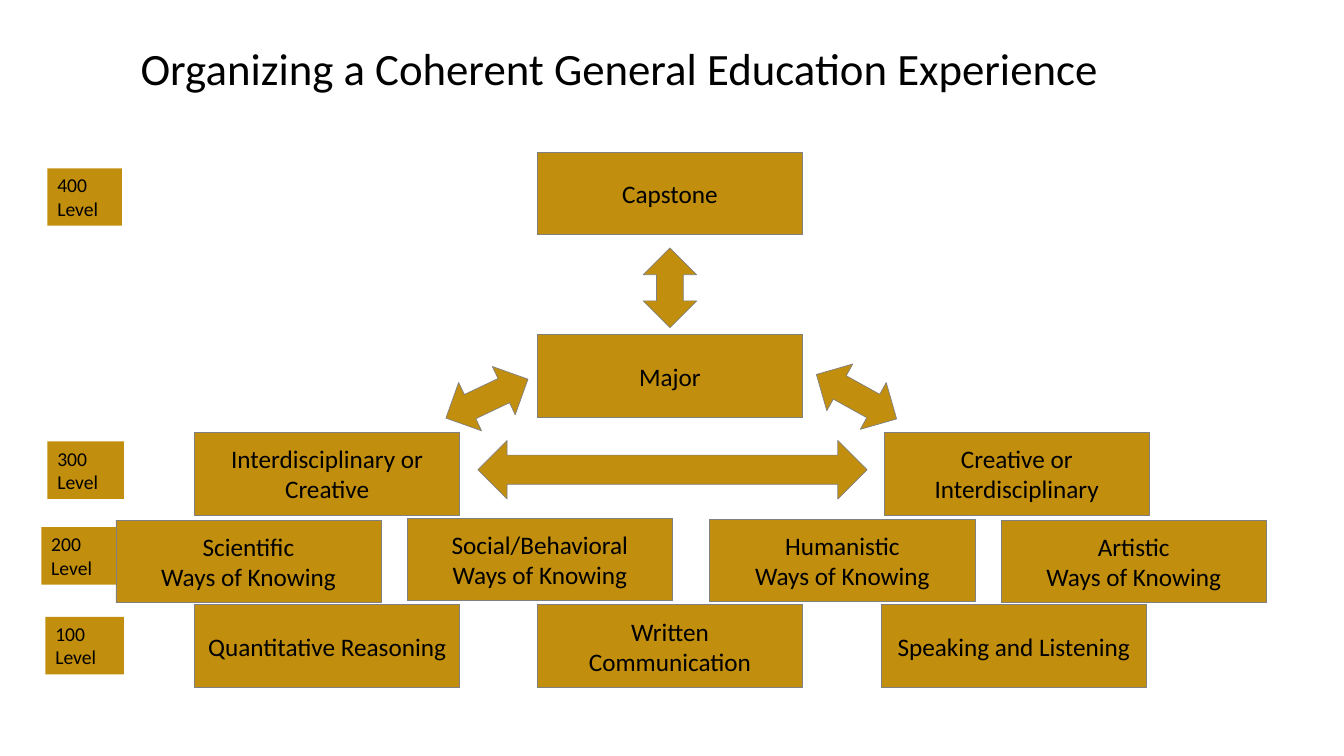
from dataclasses import dataclass

from pptx import Presentation
from pptx.dml.color import RGBColor
from pptx.enum import shapes, text
from pptx.util import Inches, Pt


@dataclass(frozen=True)
class Theme:
    font: str = "Calibri"
    gold: str = "C28E0E"
    gray: str = "808080"
    ink: str = "000000"
    title: int = 32
    body: int = 18
    label: int = 14
    edge: float = 0.5


def write(frame, words, theme, size, align=text.PP_ALIGN.LEFT,
          anchor=text.MSO_ANCHOR.TOP):
    """Fill a text frame, one paragraph per line of words."""
    frame.word_wrap = True
    frame.vertical_anchor = anchor
    frame.text = words
    for para in frame.paragraphs:
        para.alignment = align
        font = para.font
        font.name, font.size = theme.font, Pt(size)
        font.color.rgb = RGBColor.from_string(theme.ink)


class Deck:
    def __init__(self, theme):
        self.theme = theme
        self.prs = Presentation()
        self.prs.slide_width = Inches(13.33)
        self.prs.slide_height = Inches(7.5)
        self.slide = self.prs.slides.add_slide(self.prs.slide_layouts[6])

    def shape(self, kind, left, top, width, height, edged=True):
        item = self.slide.shapes.add_shape(
            kind, Inches(left), Inches(top), Inches(width), Inches(height))
        item.shadow.inherit = False
        item.fill.solid()
        item.fill.fore_color.rgb = RGBColor.from_string(self.theme.gold)
        if edged:
            item.line.color.rgb = RGBColor.from_string(self.theme.gray)
            item.line.width = Pt(self.theme.edge)
        else:
            item.line.fill.background()
        return item

    def course(self, words, left, top):
        box = self.shape(shapes.MSO_SHAPE.RECTANGLE, left, top, 2.63, 0.82)
        write(box.text_frame, words, self.theme, self.theme.body,
              align=text.PP_ALIGN.CENTER, anchor=text.MSO_ANCHOR.MIDDLE)

    def level(self, words, left, top, width):
        box = self.shape(shapes.MSO_SHAPE.RECTANGLE, left, top, width, 0.57,
                         edged=False)
        write(box.text_frame, words, self.theme, self.theme.label)

    def arrow(self, kind, left, top, width, height, turn=0):
        self.shape(kind, left, top, width, height).rotation = turn

    def title(self, words, left, top, width, height):
        box = self.slide.shapes.add_textbox(
            Inches(left), Inches(top), Inches(width), Inches(height))
        write(box.text_frame, words, self.theme, self.theme.title,
              align=text.PP_ALIGN.CENTER)


def main():
    deck = Deck(Theme())

    # Course boxes, from the base up to the capstone
    ways = (("Scientific", 1.15, 5.16), ("Social/Behavioral", 4.04, 5.14),
            ("Humanistic", 7.04, 5.15), ("Artistic", 9.93, 5.16))
    for name, left, top in ways:
        deck.course(f"{name}\nWays of Knowing", left, top)
    courses = (
        ("Quantitative Reasoning", 1.93, 6),
        ("Written Communication", 5.33, 6),
        ("Speaking and Listening", 8.74, 6),
        ("Interdisciplinary or\nCreative", 1.93, 4.29),
        ("Creative or\nInterdisciplinary", 8.77, 4.29),
        ("Major", 5.33, 3.32),
        ("Capstone", 5.33, 1.51),
    )
    for course in courses:
        deck.course(*course)

    # Two-way arrows between the boxes
    wide = shapes.MSO_SHAPE.LEFT_RIGHT_ARROW
    deck.arrow(wide, 4.38, 3.69, 0.9, 0.53, turn=334.6)
    deck.arrow(wide, 8.04, 3.67, 0.91, 0.53, turn=209)
    deck.arrow(wide, 4.74, 4.37, 3.86, 0.58)
    deck.arrow(shapes.MSO_SHAPE.UP_DOWN_ARROW, 6.38, 2.46, 0.53, 0.79)

    # Level labels down the left side
    levels = (("100 Level", 0.45, 6.12, 0.78), ("200\nLevel", 0.41, 5.23, 0.74),
              ("300 Level", 0.47, 4.38, 0.76), ("400 Level", 0.47, 1.67, 0.74))
    for level in levels:
        deck.level(*level)

    # Title
    deck.title("Organizing a Coherent General Education Experience",
               0.84, 0.36, 10.61, 0.64)
    deck.prs.save("out.pptx")


if __name__ == "__main__":
    main()
